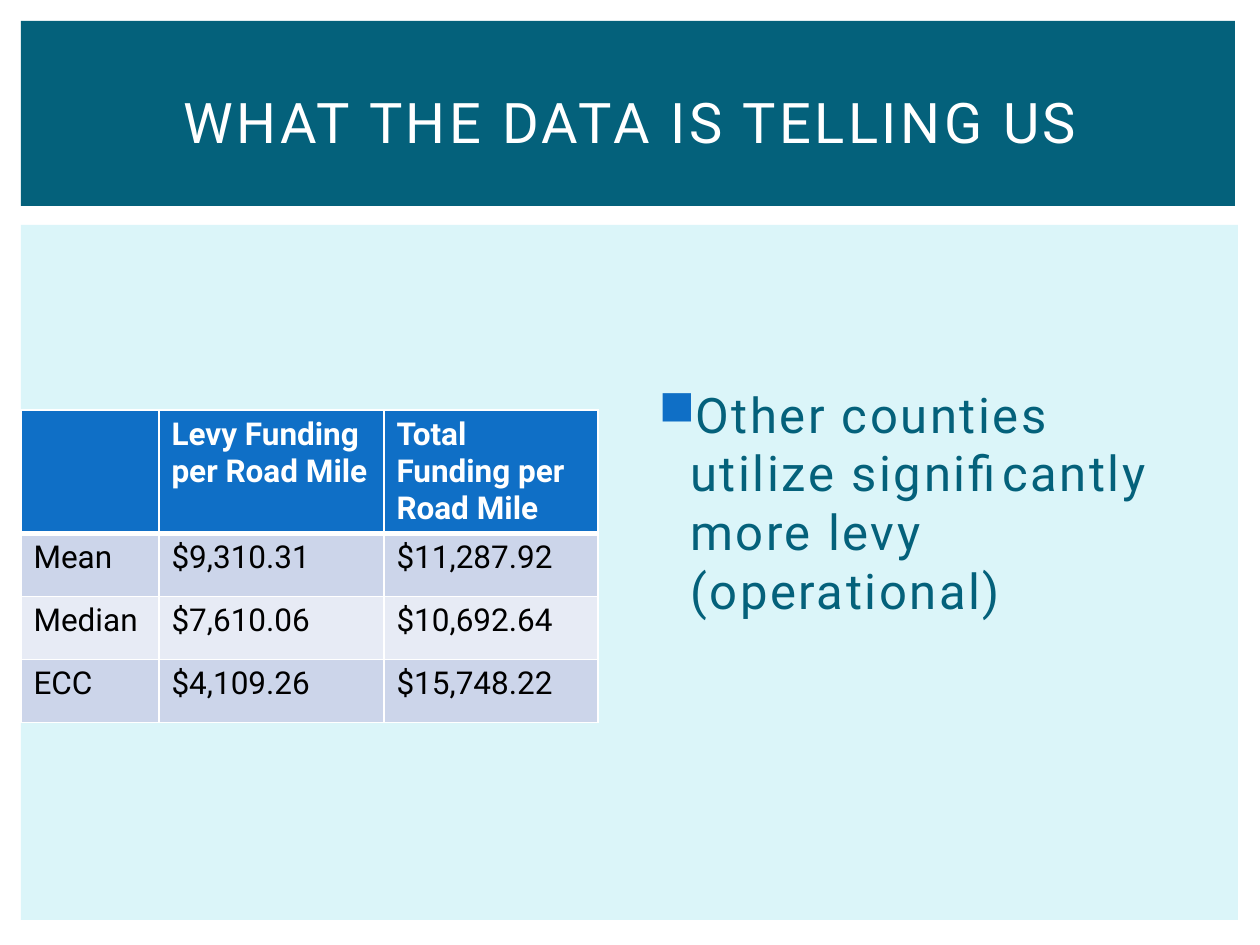
from lxml import etree
from pptx import Presentation
from pptx import util as u
from pptx.dml.color import RGBColor
from pptx.enum import shapes, text
from pptx.oxml import ns

PX_PER_INCH = 126
FONT = "Roboto"
COLORS = {
    "teal": "04617B",
    "pale": "DBF5F9",
    "blue": "0F6FC6",
    "band": "CCD5EA",
    "light_band": "E7EBF5",
    "white": "FFFFFF",
    "black": "000000",
}
COLUMN_WIDTHS = [138, 225, 214]
ROW_HEIGHTS = [94, 63, 63, 63]
FUNDING = [
    ["", "Levy Funding per Road Mile", "Total Funding per Road Mile"],
    ["Mean", "$9,310.31", "$11,287.92"],
    ["Median", "$7,610.06", "$10,692.64"],
    ["ECC", "$4,109.26", "$15,748.22"],
]


def px(length):
    return u.Emu(round(length * u.Inches(1) / PX_PER_INCH))


def rgb(name):
    return RGBColor.from_string(COLORS[name])


def add_element(parent, tag, **attributes):
    element = etree.SubElement(parent, ns.qn(tag))
    for name, value in attributes.items():
        element.set(name, str(value))
    return element


def set_font(paragraph, size, color, bold=False):
    font = paragraph.font
    font.name, font.size, font.bold = FONT, u.Pt(size), bold
    font.color.rgb = rgb(color)


def set_spacing(paragraph, points):
    """Set letter spacing on every run."""
    for run in paragraph.runs:
        run.font._element.set("spc", str(round(points * 100)))


def add_band(slide, left, top, width, height, color):
    band = slide.shapes.add_shape(
        shapes.MSO_SHAPE.RECTANGLE, px(left), px(top), px(width), px(height))
    band.shadow.inherit = False
    band.fill.solid()
    band.fill.fore_color.rgb = rgb(color)
    band.line.fill.background()


def place_title(slide, wording):
    title = slide.shapes.title
    title.left, title.top, title.width, title.height = px(53), px(49), px(1155), px(145)
    # The title has to lie in front of the bands.
    title.element.getparent().append(title.element)
    frame = title.text_frame
    frame.text = wording
    frame.auto_size = text.MSO_AUTO_SIZE.NONE
    frame.vertical_anchor = text.MSO_ANCHOR.MIDDLE
    paragraph = frame.paragraphs[0]
    paragraph.alignment = text.PP_ALIGN.CENTER
    set_font(paragraph, 32, "white")
    set_spacing(paragraph, 2)


def add_bullet(slide, wording):
    box = slide.shapes.add_textbox(px(640), px(378), px(557), px(466))
    frame = box.text_frame
    frame.word_wrap = True
    paragraph = frame.paragraphs[0]
    paragraph.text = wording
    set_font(paragraph, 28, "teal")
    set_spacing(paragraph, 1.5)
    properties = paragraph._p.get_or_add_pPr()
    properties.set("marL", str(u.Inches(0.3)))
    properties.set("indent", str(u.Inches(-0.25)))
    # Bullet elements must come before the default run properties.
    font_properties = properties.find(ns.qn("a:defRPr"))
    bullet_color = add_element(properties, "a:buClr")
    add_element(bullet_color, "a:srgbClr", val=COLORS["blue"])
    add_element(properties, "a:buChar", char="■")
    if font_properties is not None:
        properties.append(font_properties)


def set_borders(cell, bottom_width):
    properties = cell._tc.get_or_add_tcPr()
    widths = {"a:lnL": 1, "a:lnR": 1, "a:lnT": 1, "a:lnB": bottom_width}
    for index, (tag, width) in enumerate(widths.items()):
        line = add_element(properties, tag, w=u.Pt(width))
        fill = add_element(line, "a:solidFill")
        add_element(fill, "a:srgbClr", val=COLORS["white"])
        properties.insert(index, line)


def format_cell(cell, wording, row):
    is_header = row == 0
    cell.text = wording
    set_font(cell.text_frame.paragraphs[0], 18,
             "white" if is_header else "black", bold=is_header)
    cell.fill.solid()
    band = "band" if row % 2 else "light_band"
    cell.fill.fore_color.rgb = rgb("blue" if is_header else band)
    set_borders(cell, bottom_width=3 if is_header else 1)
    if row == 1:
        top_line = cell._tc.tcPr.find(ns.qn("a:lnT"))
        top_line.set("w", str(u.Pt(3)))


def add_funding_table(slide):
    frame = slide.shapes.add_table(
        len(FUNDING), len(COLUMN_WIDTHS), px(21), px(410),
        px(sum(COLUMN_WIDTHS)), px(sum(ROW_HEIGHTS)))
    table = frame.table
    for column, width in zip(table.columns, COLUMN_WIDTHS):
        column.width = px(width)
    for row, height in zip(table.rows, ROW_HEIGHTS):
        row.height = px(height)
    for row, values in enumerate(FUNDING):
        for column, wording in enumerate(values):
            format_cell(table.cell(row, column), wording, row)


def main():
    presentation = Presentation()
    presentation.slide_width, presentation.slide_height = px(1260), px(945)
    slide = presentation.slides.add_slide(presentation.slide_layouts[5])
    add_band(slide, 21, 225, 1217, 695, "pale")
    add_band(slide, 21, 21, 1214, 185, "teal")
    add_bullet(slide, "Other counties utilize significantly more levy (operational)")
    place_title(slide, "WHAT THE DATA IS TELLING US")
    add_funding_table(slide)
    presentation.save("out.pptx")


if __name__ == "__main__":
    main()
